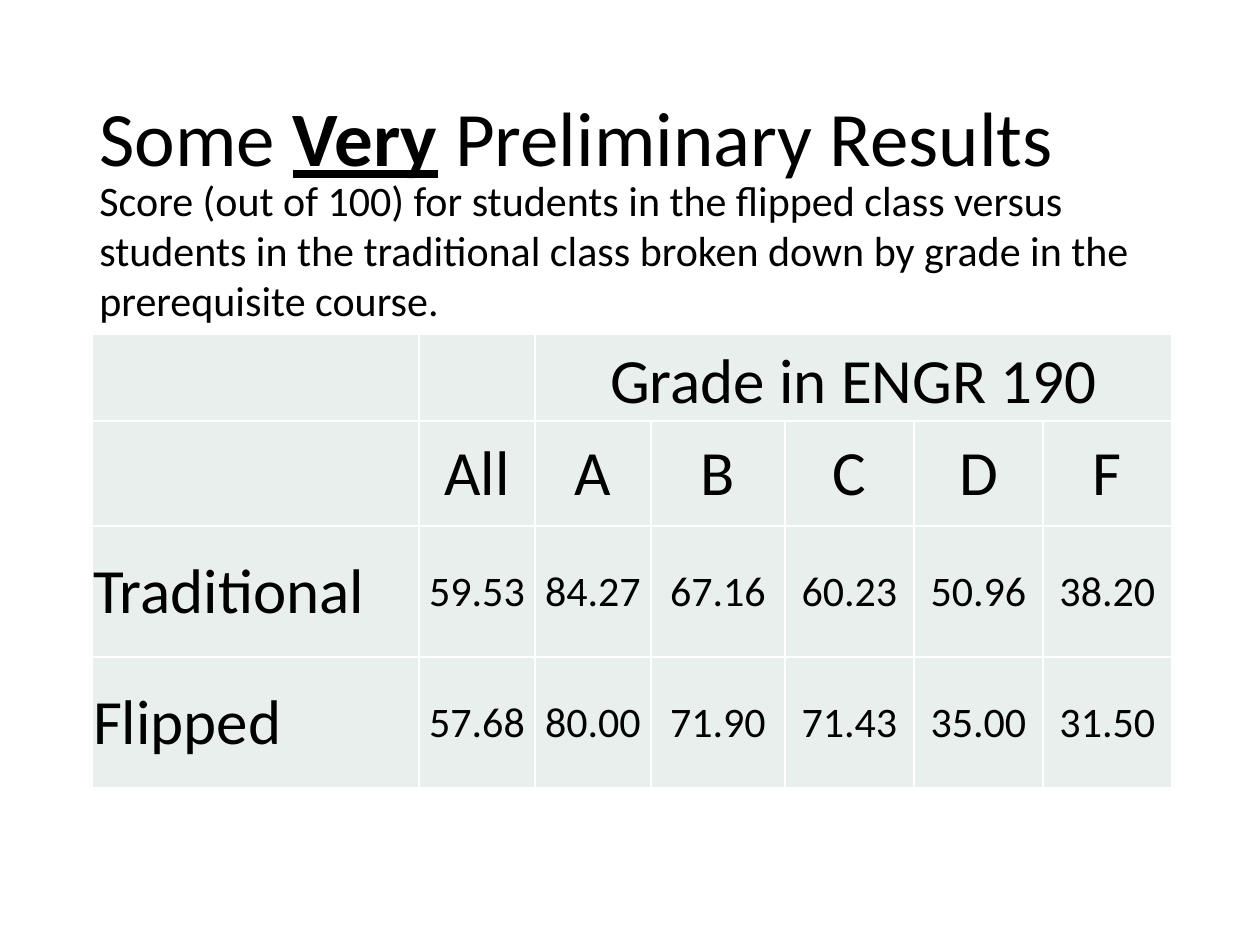
from lxml import etree
from pptx import Presentation
from pptx.dml.color import RGBColor
from pptx.enum.text import MSO_ANCHOR, MSO_AUTO_SIZE, PP_ALIGN
from pptx.oxml.ns import qn
from pptx.util import Pt

MIDDLE, BOTTOM, TOP = MSO_ANCHOR.MIDDLE, MSO_ANCHOR.BOTTOM, MSO_ANCHOR.TOP
LEFT, CENTER = PP_ALIGN.LEFT, PP_ALIGN.CENTER
NO_FIT = MSO_AUTO_SIZE.NONE

TITLE = [
    ("Some ", {}),
    ("Very", {"bold": True, "underline": True}),
    (" Preliminary Results", {}),
]
SUMMARY = (
    "Score (out of 100) for students in the flipped class versus students in "
    "the traditional class broken down by grade in the prerequisite course."
)
RESULTS = [
    ["", "", "Grade in ENGR 190", "", "", "", ""],
    ["", "All", "A", "B", "C", "D", "F"],
    ["Traditional", "59.53", "84.27", "67.16", "60.23", "50.96", "38.20"],
    ["Flipped", "57.68", "80.00", "71.90", "71.43", "35.00", "31.50"],
]
COLUMN_WIDTHS = [327, 116, 116, 134, 129, 129, 129]
ROW_HEIGHTS = [87, 105, 131, 131]
TITLE_BOX = (87, 50, 1086, 183)
SUMMARY_BOX = (87, 168, 1079, 165)
TABLE_CORNER = (92, 334)
FONT, BLACK, WHITE, PALE_GREEN = "Calibri", "000000", "FFFFFF", "E8EFEC"


def px(length):
    return round(length * 914400 / 126)


def color(value):
    return RGBColor.from_string(value)


def assign(target, values):
    for name, value in values.items():
        setattr(target, name, value)


def place(shape, box):
    assign(shape, dict(zip(("left", "top", "width", "height"), map(px, box))))


def add_span(para, text, size, **values):
    span = para.add_run()
    span.text = text
    assign(span.font, {"name": FONT, "size": Pt(size), **values})
    span.font.color.rgb = color(BLACK)


def add_borders(cell):
    properties = cell._tc.get_or_add_tcPr()
    for side in ("lnL", "lnR", "lnT", "lnB"):
        line = etree.SubElement(properties, qn(f"a:{side}"), w=str(Pt(1)))
        fill = etree.SubElement(line, qn("a:solidFill"))
        etree.SubElement(fill, qn("a:srgbClr"), val=WHITE)


def add_title(page):
    title = page.shapes.title
    place(title, TITLE_BOX)
    assign(title.text_frame, {"vertical_anchor": MIDDLE, "word_wrap": True, "auto_size": NO_FIT})
    para = title.text_frame.paragraphs[0]
    assign(para, {"alignment": LEFT, "line_spacing": 0.9})
    for text, values in TITLE:
        add_span(para, text, 44, **values)


def add_results(page):
    size = (sum(COLUMN_WIDTHS), sum(ROW_HEIGHTS))
    frame = page.shapes.add_table(
        len(ROW_HEIGHTS), len(COLUMN_WIDTHS), *map(px, TABLE_CORNER + size)
    )
    table = frame.table
    assign(table, {"first_row": False, "horz_banding": False})
    for column, width in zip(table.columns, COLUMN_WIDTHS):
        column.width = px(width)
    for row, height in zip(table.rows, ROW_HEIGHTS):
        row.height = px(height)
    table.cell(0, 2).merge(table.cell(0, 6))
    for r, texts in enumerate(RESULTS):
        for c, text in enumerate(texts):
            cell = table.cell(r, c)
            add_borders(cell)
            cell.fill.solid()
            cell.fill.fore_color.rgb = color(PALE_GREEN)
            assign(cell, {
                "margin_left": px(1), "margin_right": px(1),
                "margin_top": px(1), "margin_bottom": 0,
                "vertical_anchor": MIDDLE if r else BOTTOM,
            })
            if text:
                para = cell.text_frame.paragraphs[0]
                para.alignment = CENTER if c else LEFT
                add_span(para, text, 24 if r > 1 and c else 36)


def add_summary(page):
    box = page.shapes.add_textbox(*map(px, SUMMARY_BOX))
    assign(box.text_frame, {"word_wrap": True, "vertical_anchor": TOP})
    add_span(box.text_frame.paragraphs[0], SUMMARY, 24)


def main():
    """Build the slide of preliminary class results."""
    deck = Presentation()
    assign(deck, {"slide_width": px(1260), "slide_height": px(945)})
    page = deck.slides.add_slide(deck.slide_layouts[5])
    add_title(page)
    add_results(page)
    add_summary(page)
    deck.save("out.pptx")


if __name__ == "__main__":
    main()
